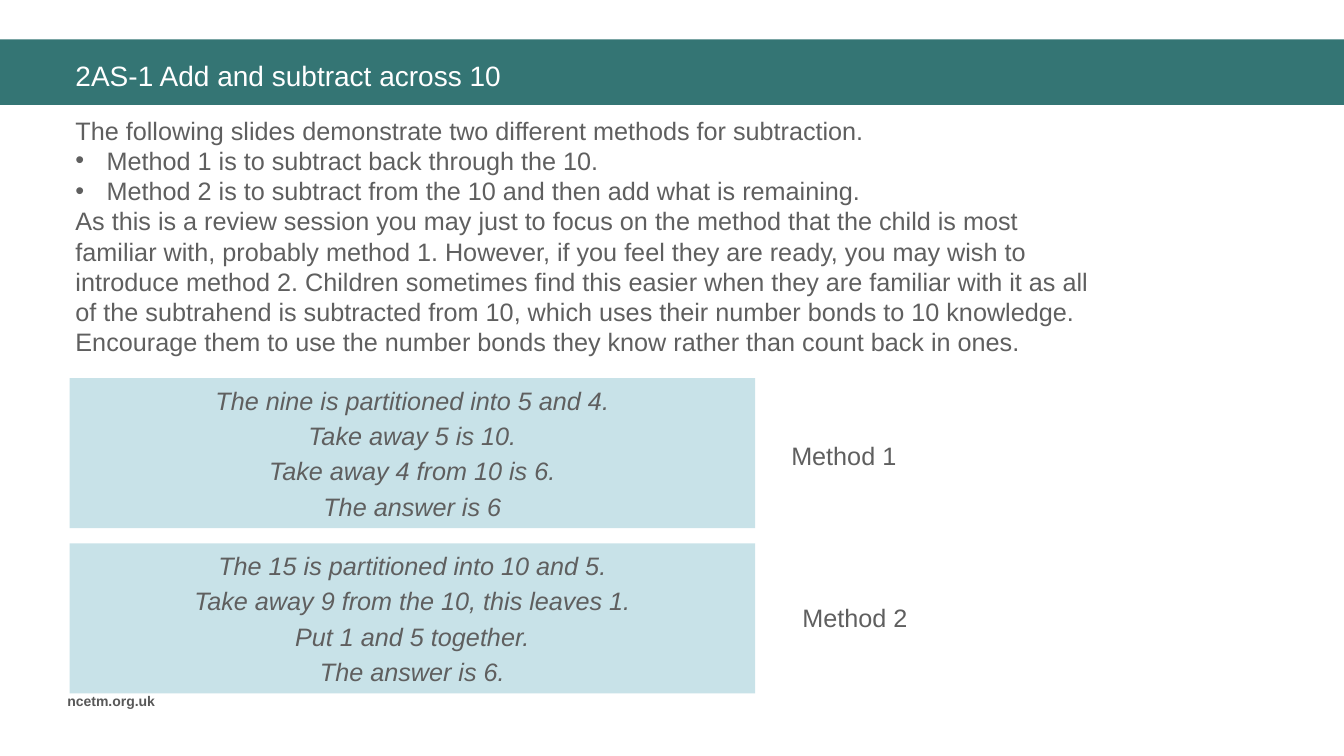
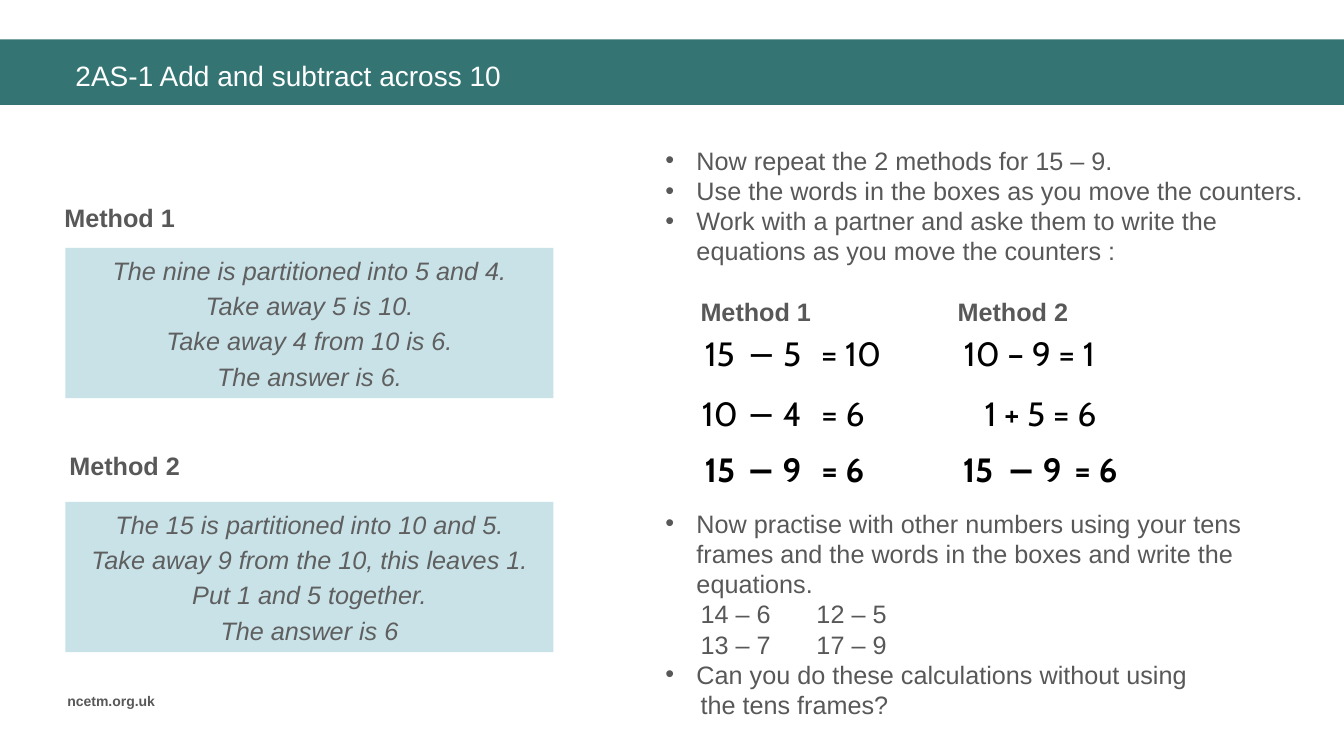
from lxml import etree
from pptx import Presentation
from pptx.dml.color import RGBColor
from pptx.enum.shapes import MSO_SHAPE
from pptx.enum.text import MSO_ANCHOR, PP_ALIGN
from pptx.oxml.ns import qn
from pptx.util import Inches, Pt

RECT = MSO_SHAPE.RECTANGLE
LEFT, CENTER = PP_ALIGN.LEFT, PP_ALIGN.CENTER
TOP, MIDDLE = MSO_ANCHOR.TOP, MSO_ANCHOR.MIDDLE

SLIDE_W, SLIDE_H = 13.33, 7.5
TEAL, PALE_BLUE, WHITE, BLACK = "347574", "C8E2E8", "FFFFFF", "000000"
GREY, DARK_GREY = "5F5F5F", "585858"

# Text formats
BODY = {"name": "Arial", "size": Pt(18), "color": GREY}
DARK_BODY = {**BODY, "color": DARK_GREY}
HEADING = {**DARK_BODY, "bold": True}
SPOKEN = {**BODY, "italic": True}
TITLE = {**BODY, "size": Pt(20), "color": WHITE}
FOOTER = {**HEADING, "size": Pt(10)}
EQUATION = {"name": "Cabin", "size": Pt(24), "color": BLACK}
ANSWER = {**EQUATION, "bold": True}

HANGING = 0.31
FIRST_LINE = 0.35

# Words the children say; the closing sentence differs from slide to slide
METHOD_1 = ["The nine is partitioned into 5 and 4.", "Take away 5 is 10.",
            "Take away 4 from 10 is 6."]
METHOD_2 = ["The 15 is partitioned into 10 and 5.",
            "Take away 9 from the 10, this leaves 1.", "Put 1 and 5 together."]

# Equation columns (left, width) and row tops, relative to the equation area
EQUATION_COLUMNS = {
    "start 1": (0, 0.66), "take 1": (0.44, 0.86), "equals 1": (1.12, 0.86),
    "ten 1": (1.12, 1.02), "whole 2": (2.52, 1.76), "sum 2": (2.63, 1.76),
    "start 2": (2.53, 0.72), "take 2": (3.02, 0.86), "equals 2": (3.63, 0.86),
}
EQUATION_ROWS = [
    (0, EQUATION, {"start 1": "15", "take 1": "− 5", "ten 1": "= 10",
                   "whole 2": "10 – 9 = 1"}),
    (0.6, EQUATION, {"start 1": "10", "take 1": "− 4", "equals 1": "= 6",
                     "sum 2": "1 + 5 = 6"}),
    (1.15, ANSWER, {"start 1": "15", "take 1": "− 9", "equals 1": "= 6",
                    "start 2": "15", "take 2": "− 9", "equals 2": "= 6"}),
]


def rgb(hex_colour):
    return RGBColor.from_string(hex_colour)


def style_font(font, style):
    for attribute, value in style.items():
        if attribute == "color":
            font.color.rgb = rgb(value)
        else:
            setattr(font, attribute, value)


def add_bullet(paragraph):
    properties = paragraph._p.get_or_add_pPr()
    properties.set("marL", str(Inches(HANGING)))
    properties.set("indent", str(-Inches(HANGING)))
    etree.SubElement(properties, qn("a:buFont")).set("typeface", "Arial")
    etree.SubElement(properties, qn("a:buChar")).set("char", "•")


def indent_first_line(paragraph):
    paragraph._p.get_or_add_pPr().set("indent", str(Inches(FIRST_LINE)))


def write(shape, lines, style, align=LEFT, anchor=TOP, gap=0):
    """Each line is a text, or a text with the function that lays it out."""
    frame = shape.text_frame
    frame.word_wrap = True
    frame.vertical_anchor = anchor
    for number, line in enumerate(lines):
        text, layout = (line, None) if isinstance(line, str) else line
        paragraph = frame.add_paragraph() if number else frame.paragraphs[0]
        paragraph.text = text
        paragraph.alignment = align
        if number and gap:
            paragraph.space_before = Pt(gap)
        if layout:
            layout(paragraph)
        for run in paragraph.runs:
            style_font(run.font, style)


def add_text(slide, box, lines, style, **options):
    write(slide.shapes.add_textbox(*map(Inches, box)), lines, style, **options)


def add_panel(slide, box, fill):
    panel = slide.shapes.add_shape(RECT, *map(Inches, box))
    panel.shadow.inherit = False
    panel.fill.solid()
    panel.fill.fore_color.rgb = rgb(fill)
    panel.line.fill.background()
    return panel


def add_method_words(slide, box, words):
    write(add_panel(slide, box, PALE_BLUE), words, SPOKEN,
          align=CENTER, anchor=MIDDLE, gap=3.6)


def add_equations(slide, left, top):
    for row_top, style, cells in EQUATION_ROWS:
        for column, text in cells.items():
            offset, width = EQUATION_COLUMNS[column]
            add_text(slide, (left + offset, top + row_top, width, 0.5),
                     [text], style, align=CENTER)


def add_base_slide(prs):
    """Blank slide with the title band and the footer."""
    slide = prs.slides.add_slide(prs.slide_layouts[6])
    add_panel(slide, (0, 0.39, SLIDE_W, 0.65), TEAL)
    add_text(slide, (0.57, 6.82, 1.21, 0.27), ["ncetm.org.uk"], FOOTER)
    add_text(slide, (0.65, 0.51, 12.32, 0.47),
             ["2AS-1 Add and subtract across 10"], TITLE, anchor=MIDDLE)
    return slide


def build_methods_slide(prs):
    slide = add_base_slide(prs)
    add_text(slide, (0.65, 1.09, 10.29, 2.52), [
        "The following slides demonstrate two different methods for subtraction.",
        ("Method 1 is to subtract back through the 10.", add_bullet),
        ("Method 2 is to subtract from the 10 and then add what is remaining.",
         add_bullet),
        "As this is a review session you may just to focus on the method that "
        "the child is most familiar with, probably method 1. However, if you "
        "feel they are ready, you may wish to introduce method 2. Children "
        "sometimes find this easier when they are familiar with it as all of "
        "the subtrahend is subtracted from 10, which uses their number bonds "
        "to 10 knowledge. Encourage them to use the number bonds they know "
        "rather than count back in ones.",
    ], BODY)
    add_method_words(slide, (0.69, 3.75, 6.8, 1.49),
                     METHOD_1 + ["The answer is 6"])
    add_method_words(slide, (0.69, 5.39, 6.8, 1.49),
                     METHOD_2 + ["The answer is 6."])
    add_text(slide, (7.75, 4.32, 2.2, 0.4), ["Method 1"], BODY)
    add_text(slide, (7.86, 5.93, 1.43, 0.4), ["Method 2"], BODY)


def build_practice_slide(prs):
    slide = add_base_slide(prs)

    # Words for each method
    add_text(slide, (0.54, 1.96, 4.84, 0.4), ["Method 1"], HEADING)
    add_method_words(slide, (0.65, 2.46, 4.84, 1.49),
                     METHOD_1 + ["The answer is 6."])
    add_text(slide, (0.59, 4.42, 4.84, 0.4), ["Method 2"], HEADING)
    add_method_words(slide, (0.65, 4.98, 4.84, 1.49),
                     METHOD_2 + ["The answer is 6"])

    # Instructions
    add_text(slide, (6.5, 1.39, 6.64, 1.3), [
        ("Now repeat the 2 methods for 15 – 9.", add_bullet),
        ("Use the words in the boxes as you move the counters.", add_bullet),
        ("Work with a partner and aske them to write the equations as you "
         "move the counters :", add_bullet),
    ], DARK_BODY)

    # Equations under their headings
    add_text(slide, (6.85, 2.89, 2, 0.4), ["Method 1"], HEADING)
    add_text(slide, (9.4, 2.89, 2, 0.4), ["Method 2"], HEADING)
    add_equations(slide, 6.81, 3.25)

    # Further practice
    add_text(slide, (6.5, 4.99, 6.64, 2.2), [
        ("Now practise with other numbers using your tens frames and the "
         "words in the boxes and write the equations.", add_bullet),
        ("14 – 6\t12 – 5", indent_first_line),
        ("13 – 7\t17 – 9", indent_first_line),
        ("Can you do these calculations without using", add_bullet),
        ("the tens frames?", indent_first_line),
    ], DARK_BODY)


def main():
    prs = Presentation()
    prs.slide_width, prs.slide_height = Inches(SLIDE_W), Inches(SLIDE_H)
    build_methods_slide(prs)
    build_practice_slide(prs)
    prs.save("out.pptx")


if __name__ == "__main__":
    main()
